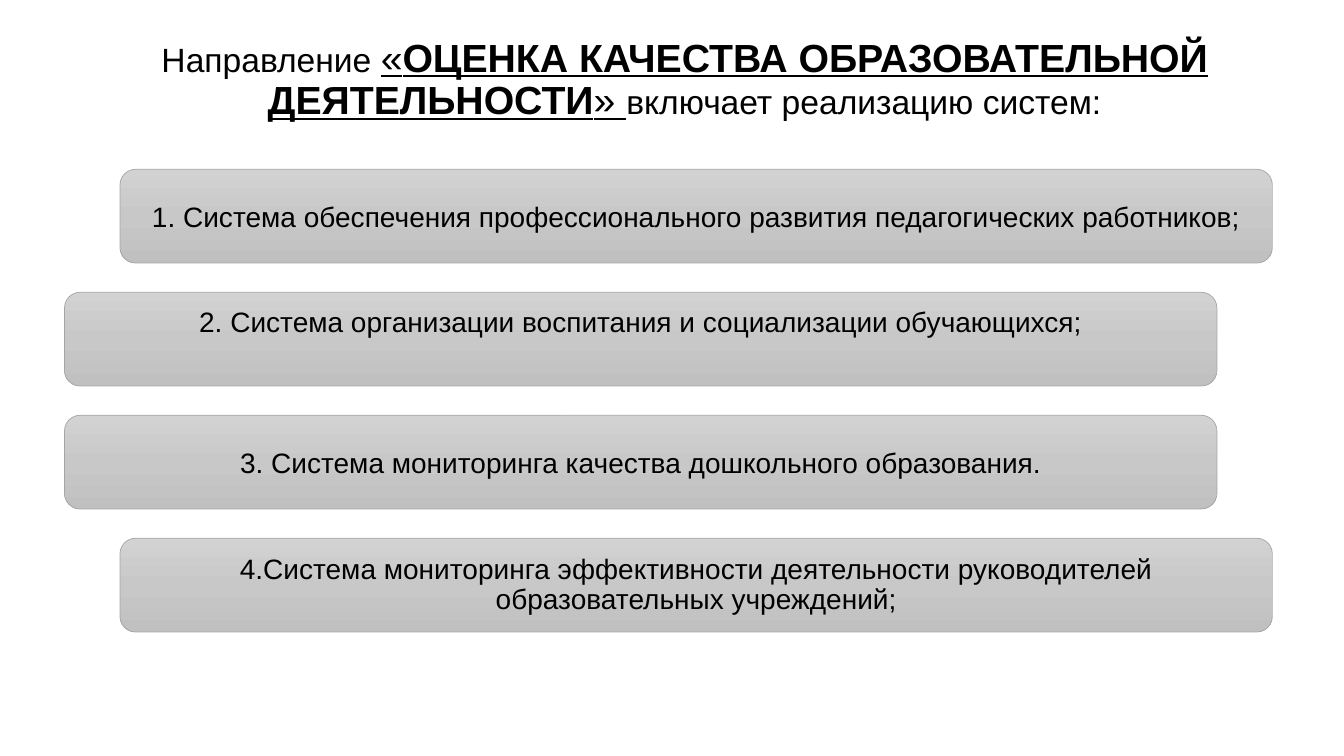
from copy import deepcopy

from pptx import Presentation
from pptx.dml.color import RGBColor
from pptx.enum.shapes import MSO_SHAPE
from pptx.enum.text import MSO_ANCHOR, PP_ALIGN
from pptx.oxml.ns import qn
from pptx.util import Inches, Pt


def color(value):
    return RGBColor.from_string(value)


class SystemsPage:
    FONT = "Arial"
    TEXT = "000000"
    BORDER = "A5A5A5"
    GRADIENT = ("D2D2D2", "C8C8C8", "C0C0C0")

    def __init__(self, deck):
        self.page = deck.slides.add_slide(deck.slide_layouts[6])

    def add_text(self, shape, runs, anchor, spacing=1.0, top=0.05, bottom=0.05):
        """Fill a shape with one centred paragraph of (text, size, bold, underline) runs."""
        frame = shape.text_frame
        frame.word_wrap = True
        frame.vertical_anchor = anchor
        frame.margin_top, frame.margin_bottom = Inches(top), Inches(bottom)
        para = frame.paragraphs[0]
        para.alignment = PP_ALIGN.CENTER
        para.line_spacing = spacing
        for text, size, bold, underline in runs:
            span = para.add_run()
            span.text = text
            span.font.name = self.FONT
            span.font.size = Pt(size)
            span.font.bold = bold
            span.font.underline = underline
            span.font.color.rgb = color(self.TEXT)

    def title(self, left, top, width, height, runs):
        box = self.page.shapes.add_textbox(
            Inches(left), Inches(top), Inches(width), Inches(height))
        self.add_text(box, runs, MSO_ANCHOR.TOP, spacing=0.9, top=0.38)

    def shade(self, shape):
        """Apply the three-stop vertical gradient."""
        shape.fill.gradient()
        shape.fill.gradient_angle = 270
        first = next(shape.element.iter(qn("a:gs")))
        middle = deepcopy(first)
        middle.set("pos", "50000")
        first.addnext(middle)
        for stop, value in zip(shape.fill.gradient_stops, self.GRADIENT):
            stop.color.rgb = color(value)

    def bar(self, left, top, width, height, text, spacing, bottom):
        shape = self.page.shapes.add_shape(
            MSO_SHAPE.ROUNDED_RECTANGLE,
            Inches(left), Inches(top), Inches(width), Inches(height))
        shape.shadow.inherit = False
        self.shade(shape)
        shape.line.color.rgb = color(self.BORDER)
        shape.line.width = Pt(0.5)
        self.add_text(shape, [(text, 20, False, False)], MSO_ANCHOR.MIDDLE,
                      spacing=spacing, bottom=bottom)


def main():
    deck = Presentation()
    deck.slide_width, deck.slide_height = Inches(13.33), Inches(7.5)
    page = SystemsPage(deck)

    page.title(0.09, 0, 13.4, 2.26, [
        ("Направление ", 24, False, False),
        ("«", 28, False, True),
        ("ОЦЕНКА КАЧЕСТВА ОБРАЗОВАТЕЛЬНОЙ ДЕЯТЕЛЬНОСТИ", 28, True, True),
        ("» ", 28, False, True),
        ("включает реализацию систем:", 24, False, False),
    ])

    # left edge, text, line spacing, bottom margin
    systems = [
        (1.19, "1. Система обеспечения профессионального развития "
               "педагогических работников;", 1.0, 0.05),
        (0.64, "2. Система организации воспитания и социализации обучающихся;",
         0.9, 0.37),
        (0.64, "3. Система мониторинга качества дошкольного образования.",
         1.0, 0.05),
        (1.19, "4.Система мониторинга эффективности деятельности "
               "руководителей образовательных учреждений;", 0.9, 0.05),
    ]
    first_top, pitch = 1.68, 1.22
    for row, (left, text, spacing, bottom) in enumerate(systems):
        page.bar(left, first_top + row * pitch, 11.43, 0.93, text, spacing, bottom)

    deck.save("out.pptx")


if __name__ == "__main__":
    main()
